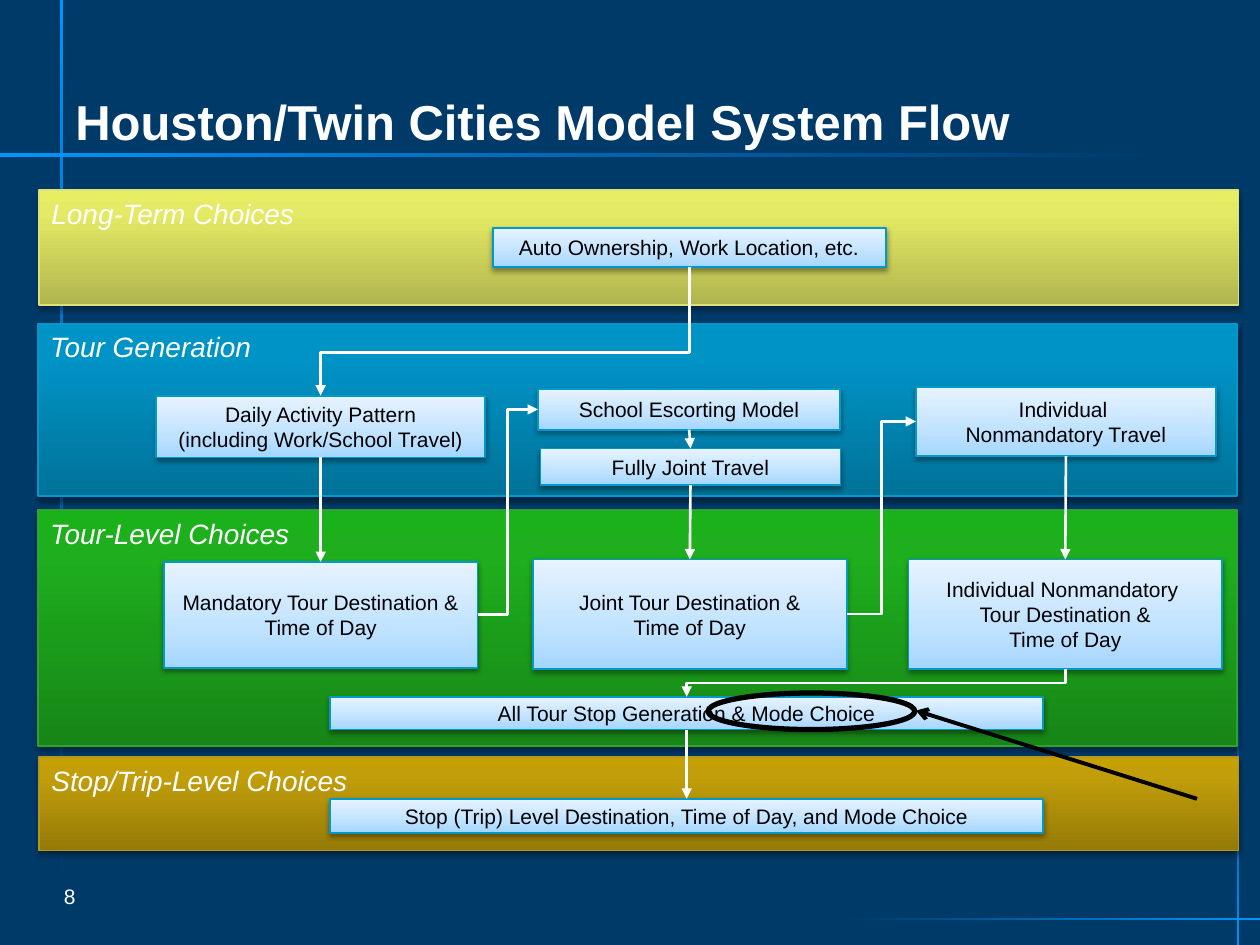
import pptx
import pptx.util
import pptx.dml.color
import pptx.enum.shapes
import pptx.enum.text
import pptx.oxml
import pptx.oxml.ns

Inches = pptx.util.Inches
Pt = pptx.util.Pt
RGBColor = pptx.dml.color.RGBColor
qn = pptx.oxml.ns.qn
Shape = pptx.enum.shapes.MSO_SHAPE
Connector = pptx.enum.shapes.MSO_CONNECTOR
Anchor = pptx.enum.text.MSO_ANCHOR
Align = pptx.enum.text.PP_ALIGN

NAVY = RGBColor(0x00, 0x3A, 0x69)
WHITE = RGBColor(0xFF, 0xFF, 0xFF)
BLACK = RGBColor(0x00, 0x00, 0x00)
BEAM = RGBColor(0x00, 0x99, 0xFF)
BEAM_END = RGBColor(0x0C, 0x92, 0xFF)
BOX_LINE = RGBColor(0x00, 0x99, 0xCC)
BOX_STOPS = [(0, RGBColor(0xA5, 0xD6, 0xFF)), (35, RGBColor(0xBF, 0xE2, 0xFF)),
             (100, RGBColor(0xE7, 0xF3, 0xFF))]
YELLOW = (RGBColor(0xB0, 0xB5, 0x4E), RGBColor(0xE4, 0xEA, 0x65),
          RGBColor(0xE7, 0xEE, 0x63), RGBColor(0xDD, 0xE2, 0x78))
BLUE = (RGBColor(0x00, 0x72, 0x98), RGBColor(0x00, 0x94, 0xC6),
        RGBColor(0x00, 0x95, 0xC7), BOX_LINE)
GREEN = (RGBColor(0x17, 0x86, 0x17), RGBColor(0x1E, 0xAE, 0x1E),
         RGBColor(0x1B, 0xB1, 0x1B), RGBColor(0x30, 0xA2, 0x30))
GOLD = (RGBColor(0x95, 0x7A, 0x08), RGBColor(0xC2, 0x9E, 0x0A),
        RGBColor(0xC6, 0xA1, 0x06), RGBColor(0xB2, 0x96, 0x20))

TOP, LEFT, BOTTOM, RIGHT = range(4)

BANDS = [
    ("Long-Term Choices", (0.31, 1.51, 9.52, 0.91), YELLOW),
    ("Tour Generation", (0.3, 2.57, 9.52, 1.37), BLUE),
    ("Tour-Level Choices", (0.3, 4.05, 9.52, 1.87), GREEN),
    ("Stop/Trip-Level Choices", (0.31, 6.01, 9.52, 0.74), GOLD),
]
BOXES = {
    "ownership": ("Auto Ownership, Work Location, etc.", (3.91, 1.81, 3.12, 0.31)),
    "daily": ("Daily Activity Pattern\n(including Work/School Travel)", (1.24, 3.14, 2.61, 0.49)),
    "escorting": ("School Escorting Model", (4.27, 3.09, 2.4, 0.32)),
    "joint": ("Fully Joint Travel", (4.29, 3.56, 2.38, 0.29)),
    "individual": ("Individual \nNonmandatory Travel", (7.27, 3.07, 2.38, 0.55)),
    "mandatory tour": ("Mandatory Tour Destination &\nTime of Day", (1.3, 4.46, 2.49, 0.84)),
    "joint tour": ("Joint Tour Destination &\nTime of Day", (4.23, 4.44, 2.49, 0.87)),
    "individual tour": ("Individual Nonmandatory \nTour Destination &\nTime of Day",
                        (7.21, 4.44, 2.49, 0.87)),
    "all tours": ("All Tour Stop Generation & Mode Choice", (2.62, 5.53, 5.66, 0.26)),
    "trips": ("Stop (Trip) Level Destination, Time of Day, and Mode Choice",
              (2.62, 6.34, 5.66, 0.27)),
}
STRAIGHT_FLOWS = [
    ("daily", "mandatory tour"), ("escorting", "joint"), ("joint", "joint tour"),
    ("individual", "individual tour"), ("all tours", "trips"),
]
SIDE_FLOWS = [("mandatory tour", "escorting"), ("joint tour", "individual")]
DOWN_FLOWS = [("ownership", "daily", 0.663), ("individual tour", "all tours", 0.5)]


def make_xml(tag, **attributes):
    element = pptx.oxml.parse_xml(f"<{tag} {pptx.oxml.ns.nsdecls('a')}/>")
    for name, value in attributes.items():
        element.set(name, str(value))
    return element


def make_color(color, alpha):
    element = make_xml("a:srgbClr", val=color)
    if alpha < 100:
        element.append(make_xml("a:alpha", val=alpha * 1000))
    return element


def fill_gradient(shape, stops, angle, end_alpha=100):
    shape.fill.gradient()
    shape.fill.gradient_angle = angle
    stop_list = shape._element.spPr.find(qn("a:gradFill")).find(qn("a:gsLst"))
    for old_stop in list(stop_list):
        stop_list.remove(old_stop)
    for position, color in stops:
        stop = make_xml("a:gs", pos=position * 1000)
        stop.append(make_color(color, end_alpha if position == 100 else 100))
        stop_list.append(stop)


def write_text(frame, text, size, color, align=Align.LEFT, anchor=Anchor.TOP,
               bold=False, italic=False):
    frame.word_wrap = True
    frame.vertical_anchor = anchor
    paragraph = frame.paragraphs[0]
    paragraph.alignment = align
    for index, line in enumerate(text.split("\n")):
        if index:
            paragraph.add_line_break()
        run = paragraph.add_run()
        run.text = line
        run.font.name = "Arial"
        run.font.size = Pt(size)
        run.font.bold = bold
        run.font.italic = italic
        run.font.color.rgb = color


def add_beam(slide, place, rotation):
    beam = slide.shapes.add_shape(Shape.RECTANGLE, *map(Inches, place))
    beam.shadow.inherit = False
    beam.rotation = rotation
    beam.line.fill.background()
    fill_gradient(beam, [(0, BEAM), (100, BEAM_END)], 270, end_alpha=0)


def add_panel(slide, place, stops, line_color, shadow_alpha, shadow_distance):
    panel = slide.shapes.add_shape(Shape.RECTANGLE, *map(Inches, place))
    fill_gradient(panel, stops, 90)
    panel.line.color.rgb = line_color
    panel.line.width = Pt(1)
    panel.shadow.inherit = False
    shadow = make_xml("a:outerShdw", blurRad=Pt(3.1), dist=Pt(shadow_distance),
                      dir=5400000, rotWithShape=0)
    shadow.append(make_color(BLACK, shadow_alpha))
    panel._element.spPr.find(qn("a:effectLst")).append(shadow)
    return panel


def add_band(slide, label, place, colors):
    *shades, line_color = colors
    band = add_panel(slide, place, list(zip((0, 80, 100), shades)), line_color, 35, 1.8)
    write_text(band.text_frame, label, 16, WHITE, italic=True)


def add_box(slide, label, place):
    box = add_panel(slide, place, BOX_STOPS, BOX_LINE, 38, 1.6)
    write_text(box.text_frame, label, 12, BLACK, Align.CENTER, Anchor.MIDDLE)
    return box


def add_label(slide, text, place, size, anchor, bold=False):
    label = slide.shapes.add_textbox(*map(Inches, place))
    write_text(label.text_frame, text, size, WHITE, anchor=anchor, bold=bold)


def add_arrow(slide, kind, color, width, head, ends=(0, 0, 0, 0)):
    arrow = slide.shapes.add_connector(kind, *map(Inches, ends))
    arrow.line.color.rgb = color
    arrow.line.width = Pt(width)
    arrow.line._get_or_add_ln().append(make_xml("a:tailEnd", type=head))
    arrow._element.spPr.append(make_xml("a:effectLst"))
    return arrow


def add_flow(slide, kind, source, source_side, target, target_side):
    flow = add_arrow(slide, kind, WHITE, 1.5, "triangle")
    flow.begin_connect(source, source_side)
    flow.end_connect(target, target_side)
    return flow


def turn_downward(flow, bend):
    run, drop = flow.begin_x - flow.end_x, flow.end_y - flow.begin_y
    center_x = (flow.begin_x + flow.end_x) // 2
    center_y = (flow.begin_y + flow.end_y) // 2
    flow.left, flow.top = center_x - drop // 2, center_y - run // 2
    flow.width, flow.height = drop, run
    frame = flow._element.spPr.find(qn("a:xfrm"))
    frame.attrib.pop("flipH", None)
    frame.set("rot", "5400000")
    adjustments = flow._element.spPr.find(qn("a:prstGeom")).find(qn("a:avLst"))
    adjustments.append(make_xml("a:gd", name="adj1", fmla=f"val {round(bend * 100000)}"))


def main():
    deck = pptx.Presentation()
    deck.slide_width, deck.slide_height = Inches(10), Inches(7.5)
    slide = deck.slides.add_slide(deck.slide_layouts[6])
    slide.background.fill.solid()
    slide.background.fill.fore_color.rgb = NAVY

    add_beam(slide, (4.52, -3.47, 0.02, 9.4), 270)
    add_beam(slide, (0.48, -0.09, 0.02, 7.07), 0)
    add_beam(slide, (8.38, 5.62, 0.01, 3.35), 90)
    add_beam(slide, (9.82, 5.04, 0.01, 2.64), 180)
    for band in BANDS:
        add_band(slide, *band)
    add_label(slide, "Houston/Twin Cities Model System Flow", (0.5, -0.01, 9, 1.25),
              28, Anchor.BOTTOM, bold=True)
    add_label(slide, "8", (0.41, 6.91, 0.73, 0.4), 12, Anchor.MIDDLE)

    boxes = {name: add_box(slide, *box) for name, box in BOXES.items()}
    for source, target in STRAIGHT_FLOWS:
        add_flow(slide, Connector.STRAIGHT, boxes[source], BOTTOM, boxes[target], TOP)
    for source, target in SIDE_FLOWS:
        add_flow(slide, Connector.ELBOW, boxes[source], RIGHT, boxes[target], LEFT)
    for source, target, bend in DOWN_FLOWS:
        flow = add_flow(slide, Connector.ELBOW, boxes[source], BOTTOM, boxes[target], TOP)
        turn_downward(flow, bend)

    highlight = slide.shapes.add_shape(Shape.OVAL, *map(Inches, (5.62, 5.5, 1.64, 0.29)))
    highlight.shadow.inherit = False
    highlight.fill.background()
    highlight.line.color.rgb = BLACK
    highlight.line.width = Pt(3)
    add_arrow(slide, Connector.STRAIGHT, BLACK, 2.25, "arrow", (9.5, 6.34, 7.27, 5.64))
    deck.save("out.pptx")


if __name__ == "__main__":
    main()
